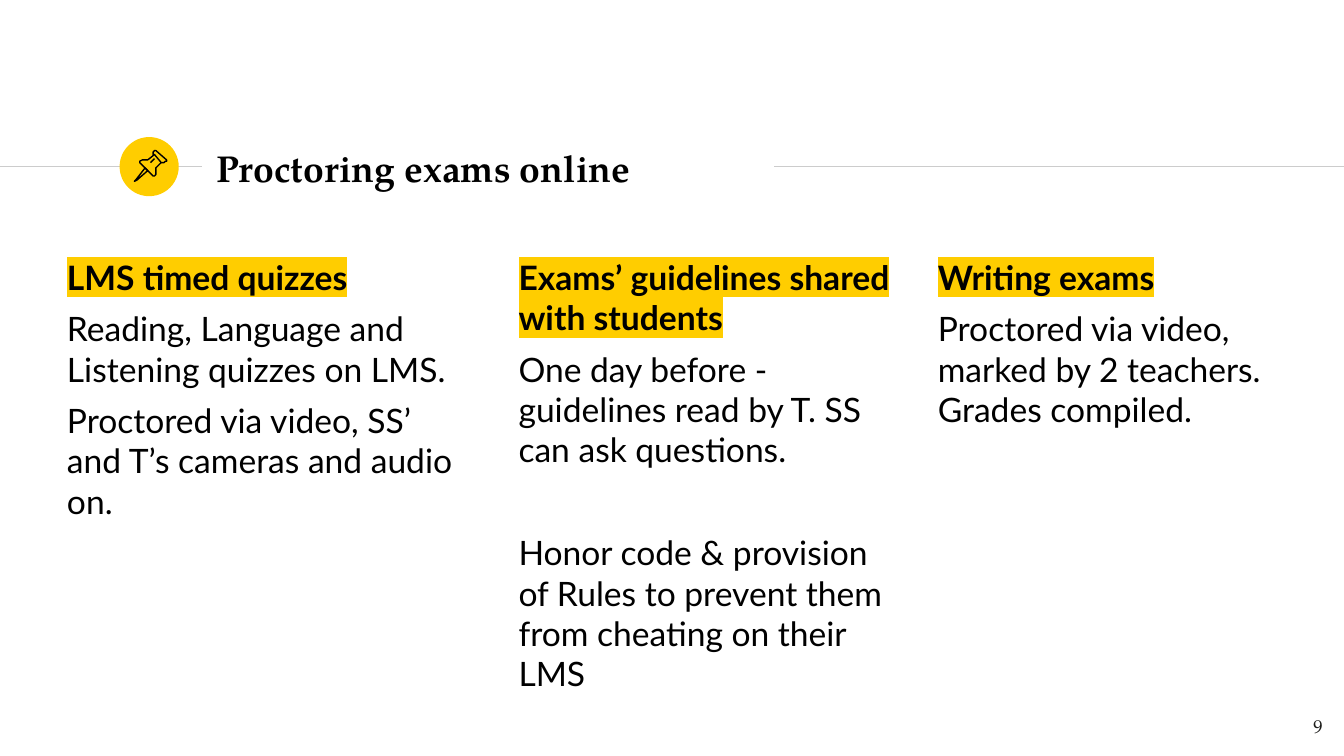
from lxml.etree import SubElement
from pptx import Presentation
from pptx.dml.color import RGBColor
from pptx.enum.shapes import MSO_CONNECTOR as Connector, MSO_SHAPE as Preset
from pptx.enum.text import MSO_ANCHOR as Anchor, PP_ALIGN as Align
from pptx.oxml.ns import qn
from pptx.util import Inches, Pt

WIDTH = 10
HEIGHT = WIDTH * 9 / 16
SERIF, SANS = "TeX Gyre Pagella", "Lato"
BLACK, YELLOW, GREY, INK = "000000", "FFCD00", "CCCCCC", "1D1D1B"
INSET, PARAGRAPH_GAP, WIDE_GAP = 0.1, 6, 33.6

TITLE = "Proctoring exams online"
PAGE_NUMBER = "9"
COLUMNS = [
    (0.4, 3.22, "LMS timed quizzes", [
        ("Reading, Language and Listening quizzes on LMS.", PARAGRAPH_GAP),
        ("Proctored via video, SS’ and T’s cameras and audio on.", PARAGRAPH_GAP),
    ]),
    (3.76, 2.99, "Exams’ guidelines shared with students", [
        ("One day before - guidelines read by T. SS can ask questions.", PARAGRAPH_GAP),
        ("Honor code & provision of Rules to prevent them from cheating on their LMS", WIDE_GAP),
    ]),
    (6.88, 2.87, "Writing exams", [
        ("Proctored via video, marked by 2 teachers. Grades compiled.", PARAGRAPH_GAP),
    ]),
]
COLUMN_TOP, COLUMN_HEIGHT = 1.81, 3.41

RULE_Y = 1.24
RULES = [(0, 1.5), (5.76, WIDTH)]
BADGE_LEFT, BADGE_SIZE = 0.89, 0.44

PIN_UNIT = 0.01
PIN_PARTS = [
    ([(108, 125), (101, 134), (100, 135), (102, 134), (110, 127)], True),
    ([(115, 115), (120, 121), (122, 121), (123, 120), (124, 120),
      (124, 119), (116, 112), (115, 112), (114, 113), (114, 115)], True),
    ([(115, 115), (110, 119), (108, 119), (106, 119), (104, 120),
      (104, 121), (114, 131), (115, 131), (116, 130), (116, 125),
      (120, 121)], False),
    ([(112, 121), (115, 118)], False),
]


def rgb(color):
    return RGBColor.from_string(color)


def add_rule(slide, start, end):
    rule = slide.shapes.add_connector(
        Connector.STRAIGHT, Inches(start), Inches(RULE_Y), Inches(end), Inches(RULE_Y))
    rule.line.color.rgb = rgb(GREY)
    rule.line.width = Pt(0.75)
    SubElement(rule._element.spPr, qn("a:effectLst"))


def add_badge(slide):
    badge = slide.shapes.add_shape(
        Preset.OVAL, Inches(BADGE_LEFT), Inches(RULE_Y - BADGE_SIZE / 2),
        Inches(BADGE_SIZE), Inches(BADGE_SIZE))
    badge.shadow.inherit = False
    badge.fill.solid()
    badge.fill.fore_color.rgb = rgb(YELLOW)
    badge.line.fill.background()


def add_pin(slide):
    pin = slide.shapes.add_group_shape()
    for points, closed in PIN_PARTS:
        builder = pin.shapes.build_freeform(*points[0], scale=Inches(PIN_UNIT))
        builder.add_line_segments(points[1:], close=closed)
        part = builder.convert_to_shape()
        part.shadow.inherit = False
        part.fill.background()
        part.line.color.rgb = rgb(BLACK)
        part.line.width = Pt(0.75)


def add_frame(slide, left, top, width, height, anchor=Anchor.TOP):
    frame = slide.shapes.add_textbox(
        Inches(left), Inches(top), Inches(width), Inches(height)).text_frame
    frame.word_wrap = True
    frame.vertical_anchor = anchor
    frame.margin_left = frame.margin_right = Inches(INSET)
    frame.margin_top = frame.margin_bottom = Inches(INSET)
    return frame


def write(paragraph, text, size, face, color=BLACK, bold=False, highlight=None):
    paragraph.text = text
    run = paragraph.runs[0]
    run.font.size = Pt(size)
    run.font.bold = bold
    run.font.color.rgb = rgb(color)
    if highlight:
        marker = SubElement(run.font._element, qn("a:highlight"))
        SubElement(marker, qn("a:srgbClr"), val=highlight)
    run.font.name = face


def add_column(slide, left, width, heading, entries):
    frame = add_frame(slide, left, COLUMN_TOP, width, COLUMN_HEIGHT)
    first = frame.paragraphs[0]
    first.space_before = Pt(PARAGRAPH_GAP)
    write(first, heading, 18, SANS, bold=True, highlight=YELLOW)
    for text, gap in entries:
        paragraph = frame.add_paragraph()
        paragraph.space_before = Pt(gap)
        write(paragraph, text, 18, SANS)


def main():
    """Build the slide on proctoring exams online."""
    deck = Presentation()
    deck.slide_width, deck.slide_height = Inches(WIDTH), Inches(HEIGHT)
    slide = deck.slides.add_slide(deck.slide_layouts[6])

    add_rule(slide, *RULES[0])
    add_badge(slide)
    add_rule(slide, *RULES[1])

    title = add_frame(slide, 1.51, 1.01, 4.24, 0.48, Anchor.MIDDLE)
    write(title.paragraphs[0], TITLE, 20, SERIF, bold=True)
    for column in COLUMNS:
        add_column(slide, *column)
    add_pin(slide)

    number = add_frame(slide, 9.34, 5.19, 0.6, 0.43, Anchor.MIDDLE).paragraphs[0]
    write(number, PAGE_NUMBER, 10, SERIF, INK)
    number.alignment = Align.RIGHT
    deck.save("out.pptx")


if __name__ == "__main__":
    main()
